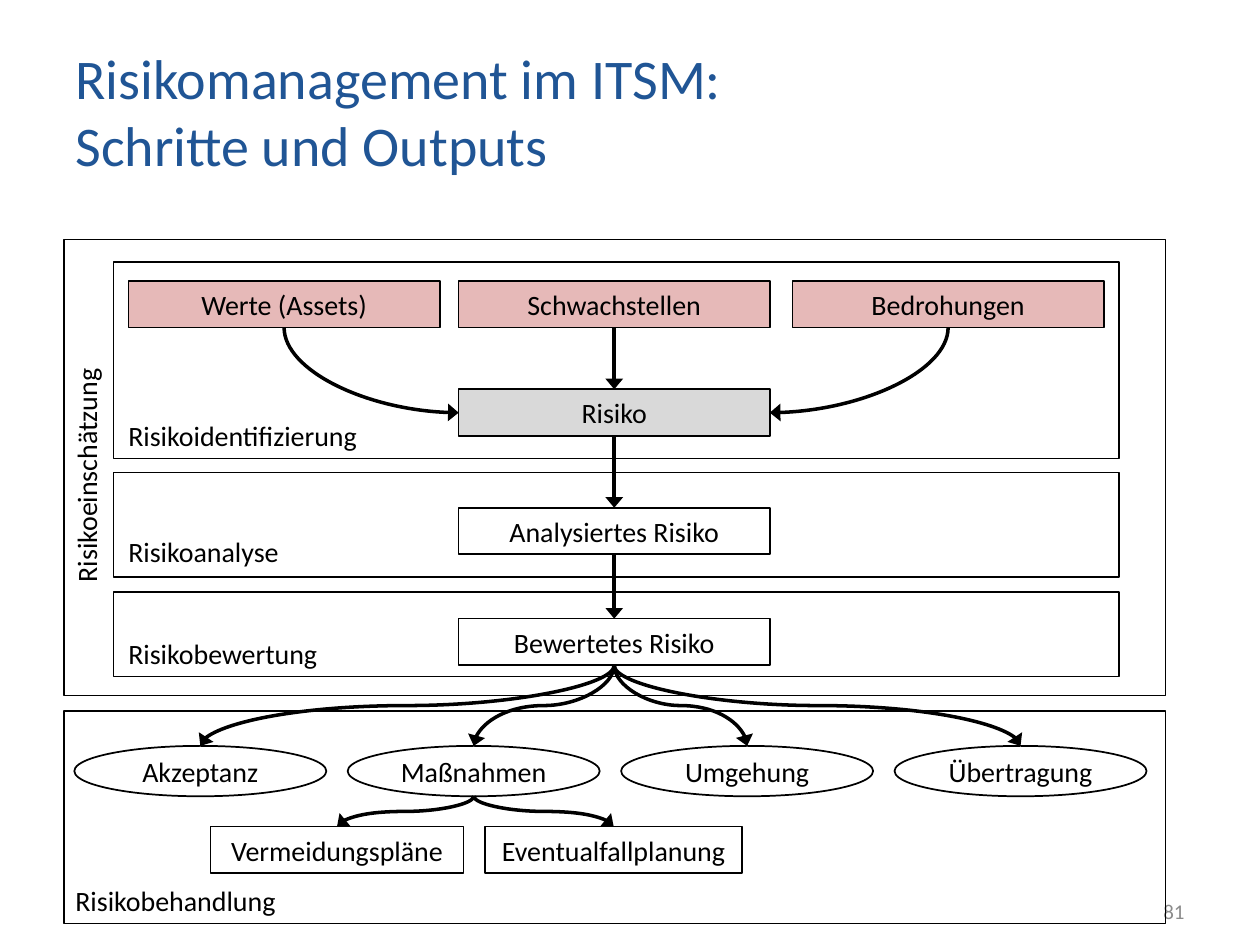
import pptx
import pptx.util
import pptx.dml.color
import pptx.enum.shapes
import pptx.enum.text
import pptx.oxml
import pptx.oxml.ns

Inches = pptx.util.Inches
Pt = pptx.util.Pt
SHAPE = pptx.enum.shapes.MSO_SHAPE
LINK = pptx.enum.shapes.MSO_CONNECTOR
ALIGN = pptx.enum.text.PP_ALIGN
ANCHOR = pptx.enum.text.MSO_ANCHOR
qn = pptx.oxml.ns.qn

COLORS = {"title": "205595", "black": "000000", "number": "8B8B8B",
          "input": "E6B9B8", "risk": "D9D9D9"}
BOX_W, BOX_H = 2.47, 0.37


def rgb(name):
    return pptx.dml.color.RGBColor.from_string(COLORS[name])


def set_text(tf, text, size=16, color="black", align=ALIGN.LEFT,
             anchor=ANCHOR.TOP, wrap=True):
    tf.word_wrap = wrap
    tf.vertical_anchor = anchor
    p = tf.paragraphs[0]
    p.text = text
    p.alignment = align
    for r in p.runs:
        r.font.name = "Calibri"
        r.font.size = Pt(size)
        r.font.color.rgb = rgb(color)


def add_text(s, x, y, w, h, text, rotation=0, **fmt):
    sp = s.shapes.add_textbox(Inches(x), Inches(y), Inches(w), Inches(h))
    sp.rotation = rotation
    set_text(sp.text_frame, text, **fmt)


def add_box(s, x, y, w, h, text="", fill=None, kind=SHAPE.RECTANGLE):
    sp = s.shapes.add_shape(kind, Inches(x), Inches(y), Inches(w), Inches(h))
    sp.shadow.inherit = False
    if fill:
        sp.fill.solid()
        sp.fill.fore_color.rgb = rgb(fill)
    else:
        sp.fill.background()
    sp.line.color.rgb = rgb("black")
    sp.line.width = Pt(1)
    if text:
        tf = sp.text_frame
        tf.margin_left = tf.margin_right = tf.margin_top = tf.margin_bottom = 0
        set_text(tf, text, align=ALIGN.CENTER, anchor=ANCHOR.MIDDLE)
    return sp


def top(sp):
    return sp.left + sp.width // 2, sp.top


def bottom(sp):
    return sp.left + sp.width // 2, sp.top + sp.height


def side(sp, right=False):
    return sp.left + (sp.width if right else 0), sp.top + sp.height // 2


def add_arrow(s, start, end, kind=LINK.STRAIGHT):
    sp = s.shapes.add_connector(kind, *start, *end)
    sp.line.color.rgb = rgb("black")
    sp.line.width = Pt(2)
    sp.line._get_or_add_ln().append(pptx.oxml.parse_xml(
        '<a:tailEnd %s type="triangle" w="lg" len="med"/>'
        % pptx.oxml.ns.nsdecls("a")))
    spPr = sp._element.spPr
    spPr.append(spPr.makeelement(qn("a:effectLst"), {}))
    return sp


def add_curve(s, start, end, preset="curvedConnector3"):
    """Curve that leaves downwards: a box turned on its side round the midpoint."""
    (x1, y1), (x2, y2) = start, end
    cx, cy = (x1 + x2) // 2, (y1 + y2) // 2
    half_w, half_h = abs(y2 - y1) // 2, abs(x2 - x1) // 2
    sp = add_arrow(s, (cx - half_w, cy - half_h), (cx + half_w, cy + half_h),
                   LINK.CURVE)
    spPr = sp._element.spPr
    xfrm = spPr.find(qn("a:xfrm"))
    xfrm.set("rot", str((90 if x2 < x1 else 270) * 60000))
    if x2 > x1:
        xfrm.set("flipH", "1")
    spPr.find(qn("a:prstGeom")).set("prst", preset)


def draw_header(s, x, y, w, h):
    add_text(s, x, y, w, h, "Risikomanagement im ITSM: \nSchritte und Outputs",
             size=32, color="title", anchor=ANCHOR.MIDDLE)


def draw_assessment(s, x, y, w, h):
    """Draw the three assessment stages; return the last result box."""
    add_box(s, x, y, w, h)
    add_text(s, x - 0.78, y + 1.69, 1.9, 0.36, "Risikoeinschätzung",
             rotation=270, wrap=False)

    # Stage frames and labels
    stages = [("Risikoidentifizierung", 0.18, 1.56, 1.37),
              ("Risikoanalyse", 1.85, 0.83, 2.29),
              ("Risikobewertung", 2.8, 0.67, 3.1)]
    for label, frame_y, frame_h, label_y in stages:
        add_box(s, x + 0.39, y + frame_y, 7.98, frame_h)
        add_text(s, x + 0.41, y + label_y, 2.1, 0.36, label)

    # Inputs
    inputs = [("Werte (Assets)", 0.51), ("Schwachstellen", 3.13),
              ("Bedrohungen", 5.78)]
    assets, weaknesses, threats = [
        add_box(s, x + dx, y + 0.33, BOX_W, BOX_H, text, "input")
        for text, dx in inputs]

    # Chain of results
    results = [("Risiko", 1.19, "risk"), ("Analysiertes Risiko", 2.13, None),
               ("Bewertetes Risiko", 3.01, None)]
    chain = [weaknesses] + [
        add_box(s, x + 3.13, y + dy, BOX_W, BOX_H, text, fill)
        for text, dy, fill in results]
    for a, b in zip(chain, chain[1:]):
        add_arrow(s, bottom(a), top(b))
    risk = chain[1]
    add_curve(s, bottom(assets), side(risk), "curvedConnector2")
    add_curve(s, bottom(threats), side(risk, right=True), "curvedConnector2")
    return chain[-1]


def draw_treatment(s, x, y, w, h, source):
    add_box(s, x, y, w, h)
    add_text(s, x - 0.01, y + 1.32, 2.1, 0.36, "Risikobehandlung")

    # Options
    names = ["Akzeptanz", "Maßnahmen", "Umgehung", "Übertragung"]
    options = [add_box(s, x + 0.08 + 2.17 * i, y + 0.28, 2, 0.4, name,
                       kind=SHAPE.OVAL) for i, name in enumerate(names)]
    for option in options:
        add_curve(s, bottom(source), top(option))

    # Plans that follow from the measures
    for text, dx, plan_w in [("Vermeidungspläne", 1.16, 2.01),
                             ("Eventualfallplanung", 3.34, 2.04)]:
        plan = add_box(s, x + dx, y + 0.92, plan_w, BOX_H, text)
        add_curve(s, bottom(options[1]), top(plan))


def draw_number(s, x, y, w, h):
    add_text(s, x, y, w, h, "81", size=12, color="number", align=ALIGN.RIGHT,
             anchor=ANCHOR.MIDDLE)


def main():
    prs = pptx.Presentation()
    prs.slide_width, prs.slide_height = Inches(10), Inches(7.5)
    s = prs.slides.add_slide(prs.slide_layouts[6])
    draw_header(s, 0.5, 0.3, 8.04, 1.15)
    draw_number(s, 7.17, 7.03, 2.33, 0.4)
    evaluated = draw_assessment(s, 0.51, 1.9, 8.74, 3.62)
    draw_treatment(s, 0.51, 5.64, 8.74, 1.69, evaluated)
    prs.save("out.pptx")


if __name__ == "__main__":
    main()
